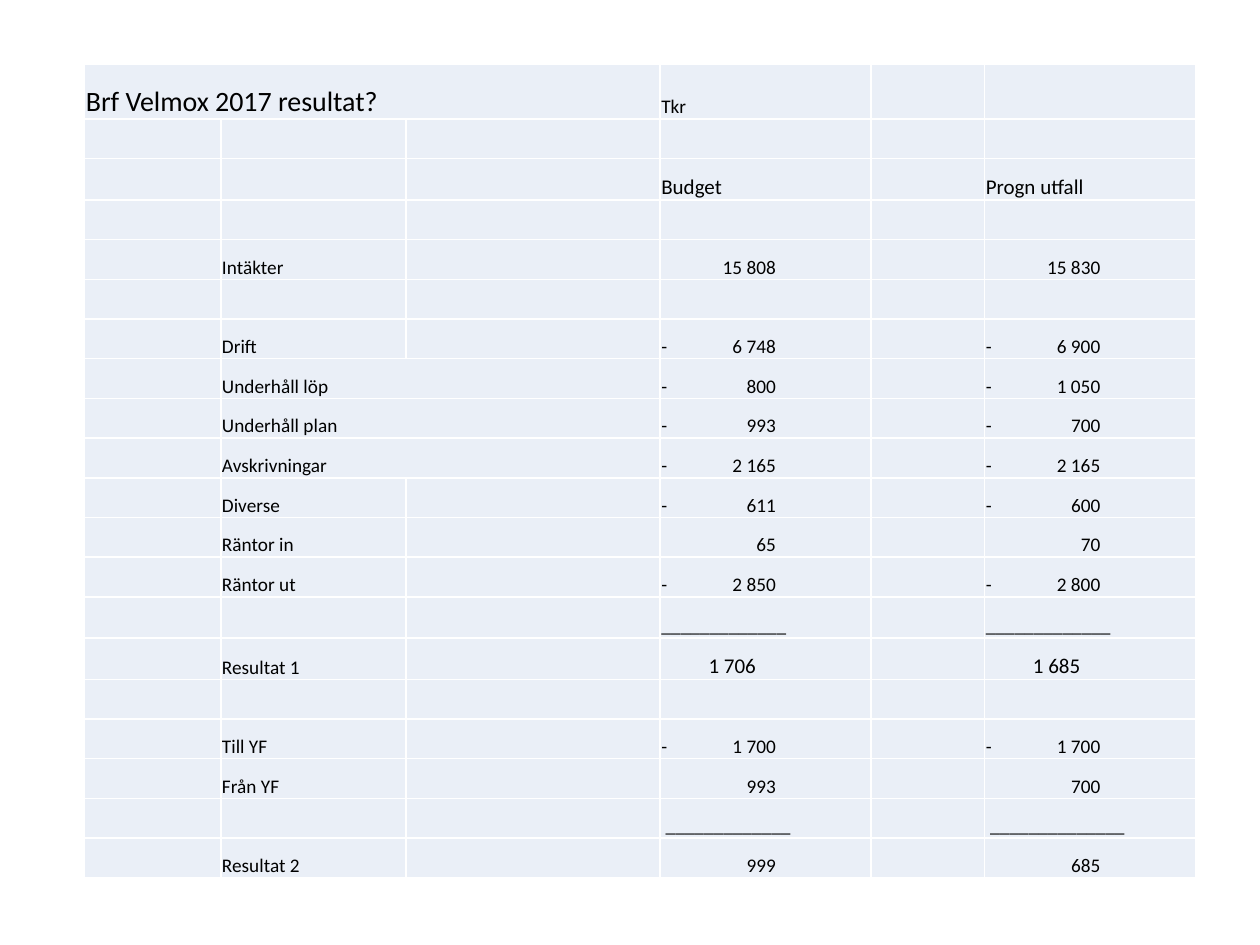
from lxml.etree import SubElement
from pptx import Presentation
from pptx.dml.color import RGBColor
from pptx.enum.text import MSO_ANCHOR
from pptx.oxml.ns import qn
from pptx.util import Pt

BLACK = RGBColor(0x00, 0x00, 0x00)
WHITE = RGBColor(0xFF, 0xFF, 0xFF)
PALE_BLUE = RGBColor(0xEA, 0xEF, 0xF7)
FONT = "Calibri"
BODY_SIZE, HEADING_SIZE, TITLE_SIZE = 11, 12, 16

TITLE = "Brf Velmox 2017 resultat?"
UNIT = "Tkr"
RULE = "_" * 13
# Label, budget, forecast: one entry for each row below the title
ROWS = [
    ("", "", ""),
    ("", "Budget", "Progn utfall"),
    ("", "", ""),
    ("Intäkter", 15808, 15830),
    ("", "", ""),
    ("Drift", -6748, -6900),
    ("Underhåll löp", -800, -1050),
    ("Underhåll plan", -993, -700),
    ("Avskrivningar", -2165, -2165),
    ("Diverse", -611, -600),
    ("Räntor in", 65, 70),
    ("Räntor ut", -2850, -2800),
    ("", RULE, RULE),
    ("Resultat 1", 1706, 1685),
    ("", "", ""),
    ("Till YF", -1700, -1700),
    ("Från YF", 993, 700),
    ("", " " + RULE, " " + RULE + "_"),
    ("Resultat 2", 999, 685),
]
LARGE_ROWS = {2, 14}
TALL_ROWS = {2, 13, 14}
WIDE_LABELS = {"Underhåll löp", "Underhåll plan", "Avskrivningar"}

LEFT, TOP = 48.4, 36.5
COLUMN_WIDTHS = [77.8, 105.9, 145.2, 120.4, 65, 120.4]
TITLE_HEIGHT, TALL_HEIGHT, ROW_HEIGHT = 31.5, 23.6, 22.7
LABEL_COLUMN, BUDGET_COLUMN, FORECAST_COLUMN = 1, 3, 5
AMOUNT_EDGE, RESULT_EDGE = 65.5, 54


def amount_text(amount):
    """Sign at the left, digits grouped by threes after a tab."""
    sign = "-" if amount < 0 else ""
    return f"{sign}\t{abs(amount):,}".replace(",", " ")


def style_cell(cell):
    cell.margin_left = cell.margin_right = cell.margin_top = Pt(0.7)
    cell.margin_bottom = Pt(0)
    cell.vertical_anchor = MSO_ANCHOR.BOTTOM
    properties = cell._tc.get_or_add_tcPr()
    for side in ("a:lnL", "a:lnR", "a:lnT", "a:lnB"):
        line = SubElement(properties, qn(side), w=str(Pt(1)))
        fill = SubElement(line, qn("a:solidFill"))
        SubElement(fill, qn("a:srgbClr"), val=str(WHITE))
    cell.fill.solid()
    cell.fill.fore_color.rgb = PALE_BLUE


def write_cell(cell, text, size=BODY_SIZE, right_tab=None):
    paragraph = cell.text_frame.paragraphs[0]
    if not text:
        # Keeps an empty line from stretching the row
        SubElement(paragraph._p, qn("a:endParaRPr"), sz=str(size * 100))
        return
    if right_tab:
        tabs = SubElement(paragraph._p.get_or_add_pPr(), qn("a:tabLst"))
        SubElement(tabs, qn("a:tab"), pos=str(Pt(right_tab)), algn="r")
    run = paragraph.add_run()
    run.text = text
    run.font.name = FONT
    run.font.size = Pt(size)
    run.font.color.rgb = BLACK


def table_contents():
    """Map (row, column) to the text and its format."""
    contents = {
        (0, 0): dict(text=TITLE, size=TITLE_SIZE),
        (0, BUDGET_COLUMN): dict(text=UNIT),
    }
    for row, (label, budget, forecast) in enumerate(ROWS, start=1):
        contents[row, LABEL_COLUMN] = dict(text=label)
        large = row in LARGE_ROWS
        size = HEADING_SIZE if large else BODY_SIZE
        for column, value in ((BUDGET_COLUMN, budget), (FORECAST_COLUMN, forecast)):
            entry = dict(text=value, size=size)
            if isinstance(value, int):
                edge = RESULT_EDGE if large else AMOUNT_EDGE
                entry.update(text=amount_text(value), right_tab=edge)
            contents[row, column] = entry
    return contents


def main():
    presentation = Presentation()
    presentation.slide_width, presentation.slide_height = Pt(720), Pt(540)
    slide = presentation.slides.add_slide(presentation.slide_layouts[6])

    heights = [TITLE_HEIGHT] + [
        TALL_HEIGHT if row in TALL_ROWS else ROW_HEIGHT
        for row in range(1, len(ROWS) + 1)
    ]
    table = slide.shapes.add_table(
        len(heights), len(COLUMN_WIDTHS),
        Pt(LEFT), Pt(TOP), Pt(sum(COLUMN_WIDTHS)), Pt(sum(heights)),
    ).table
    table.first_row = table.horz_banding = False
    for column, width in zip(table.columns, COLUMN_WIDTHS):
        column.width = Pt(width)
    for row, height in zip(table.rows, heights):
        row.height = Pt(height)

    contents = table_contents()
    for row in range(len(heights)):
        for column in range(len(COLUMN_WIDTHS)):
            cell = table.cell(row, column)
            style_cell(cell)
            write_cell(cell, **contents.get((row, column), dict(text="")))

    table.cell(0, 0).merge(table.cell(0, 2))
    for row, (label, *_) in enumerate(ROWS, start=1):
        if label in WIDE_LABELS:
            table.cell(row, LABEL_COLUMN).merge(table.cell(row, LABEL_COLUMN + 1))

    presentation.save("out.pptx")


if __name__ == "__main__":
    main()
